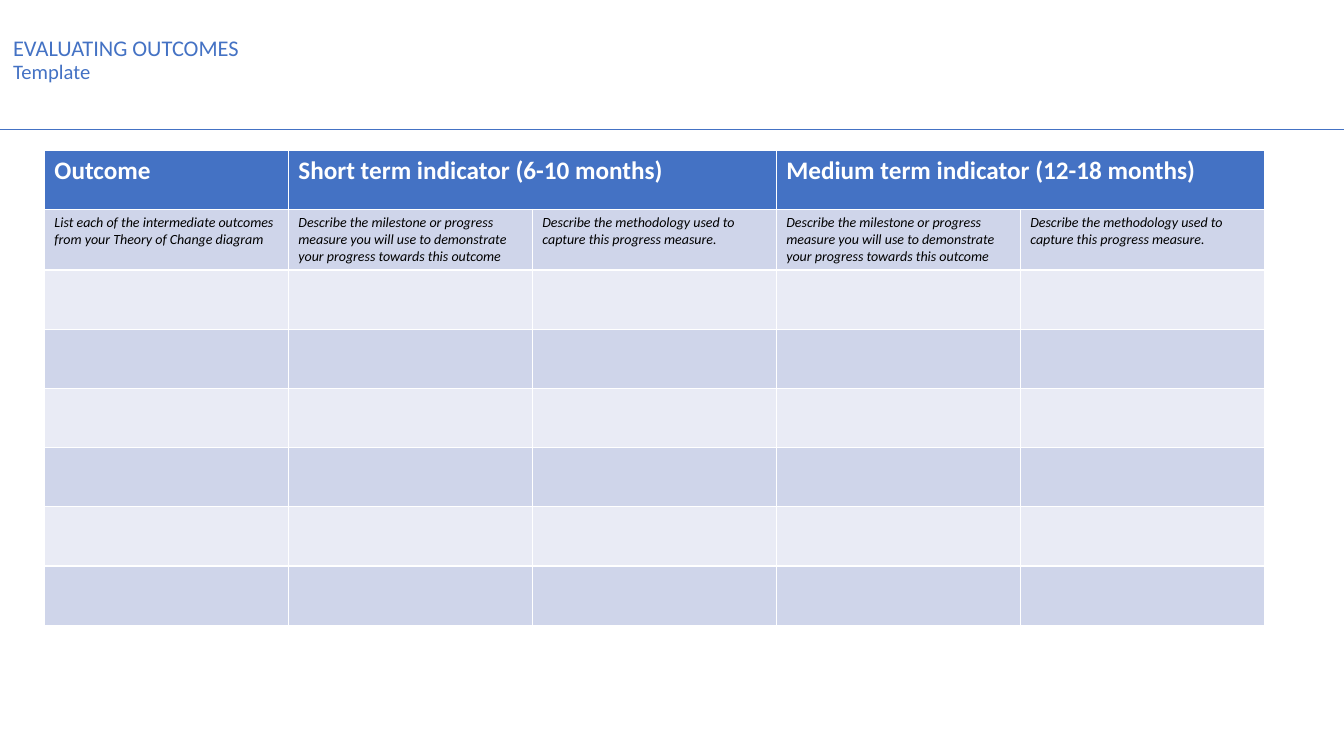
from lxml.etree import SubElement
from pptx import Presentation
from pptx.dml.color import RGBColor
from pptx.enum.shapes import MSO_CONNECTOR
from pptx.enum.text import MSO_ANCHOR
from pptx.oxml.ns import qn
from pptx.util import Inches, Pt

FONT = "Calibri"
BLUE = RGBColor(0x44, 0x72, 0xC4)
DARK_BAND = RGBColor(0xCF, 0xD5, 0xEA)
LIGHT_BAND = RGBColor(0xE9, 0xEB, 0xF5)
WHITE = RGBColor(0xFF, 0xFF, 0xFF)
BLACK = RGBColor(0, 0, 0)

SLIDE_WIDTH, SLIDE_HEIGHT = 13.33, 7.5
COLUMN_COUNT, ROW_COUNT = 5, 8

TITLE_LINES = [("EVALUATING OUTCOMES", 16), ("Template", 14.7)]
# First column, number of columns covered, heading
HEADINGS = [
    (0, 1, "Outcome"),
    (1, 2, "Short term indicator (6-10 months)"),
    (3, 2, "Medium term indicator (12-18 months)"),
]
INDICATOR_GUIDANCE = [
    "Describe the milestone or progress measure you will use to demonstrate "
    "your progress towards this outcome",
    "Describe the methodology used to capture this progress measure.",
]
GUIDANCE = [
    "List each of the intermediate outcomes from your Theory of Change diagram",
    *INDICATOR_GUIDANCE * 2,
]


def style_font(font, size, color, bold=False, italic=False):
    font.name = FONT
    font.size = Pt(size)
    font.color.rgb = color
    font.bold = bold
    font.italic = italic


def add_title(slide, left, top, width, height):
    title = slide.shapes.add_textbox(
        Inches(left), Inches(top), Inches(width), Inches(height))
    frame = title.text_frame
    frame.word_wrap = True
    frame.vertical_anchor = MSO_ANCHOR.BOTTOM
    frame.margin_left = frame.margin_right = Inches(0.13)
    frame.margin_top = Inches(0.07)
    frame.margin_bottom = Inches(0.29)
    frame.text = "\n".join(text for text, _ in TITLE_LINES)
    for paragraph, (_, size) in zip(frame.paragraphs, TITLE_LINES):
        paragraph.line_spacing = 0.9
        style_font(paragraph.font, size, BLUE)


def add_divider(slide, left, top, width):
    divider = slide.shapes.add_connector(
        MSO_CONNECTOR.STRAIGHT,
        Inches(left), Inches(top), Inches(left + width), Inches(top))
    divider.line.color.rgb = BLUE
    divider.line.width = Pt(0.5)
    SubElement(divider._element.spPr, qn("a:effectLst"))


def fill_cell(cell, color):
    cell.fill.solid()
    cell.fill.fore_color.rgb = color


def write_cell(cell, text, **font_style):
    cell.text = text
    style_font(cell.text_frame.paragraphs[0].font, **font_style)


def add_outcomes_table(slide, left, top, width, height):
    table = slide.shapes.add_table(
        ROW_COUNT, COLUMN_COUNT,
        Inches(left), Inches(top), Inches(width), Inches(height)).table
    for column in table.columns:
        column.width = Inches(width / COLUMN_COUNT)
    for index, row in enumerate(table.rows):
        row.height = Inches(height / ROW_COUNT)
        band = DARK_BAND if index % 2 else LIGHT_BAND
        for cell in row.cells:
            fill_cell(cell, band if index else BLUE)

    for first, span, heading in HEADINGS:
        cell = table.cell(0, first)
        if span > 1:
            cell.merge(table.cell(0, first + span - 1))
        write_cell(cell, heading, size=18, color=WHITE, bold=True)
    for column, text in enumerate(GUIDANCE):
        write_cell(table.cell(1, column), text, size=10, color=BLACK, italic=True)


def main():
    presentation = Presentation()
    presentation.slide_width = Inches(SLIDE_WIDTH)
    presentation.slide_height = Inches(SLIDE_HEIGHT)
    slide = presentation.slides.add_slide(presentation.slide_layouts[6])
    add_title(slide, 0, 0.03, 4.11, 1.09)
    add_divider(slide, 0, 1.28, SLIDE_WIDTH)
    add_outcomes_table(slide, 0.44, 1.49, 12.1, 4.7)
    presentation.save("out.pptx")


if __name__ == "__main__":
    main()
